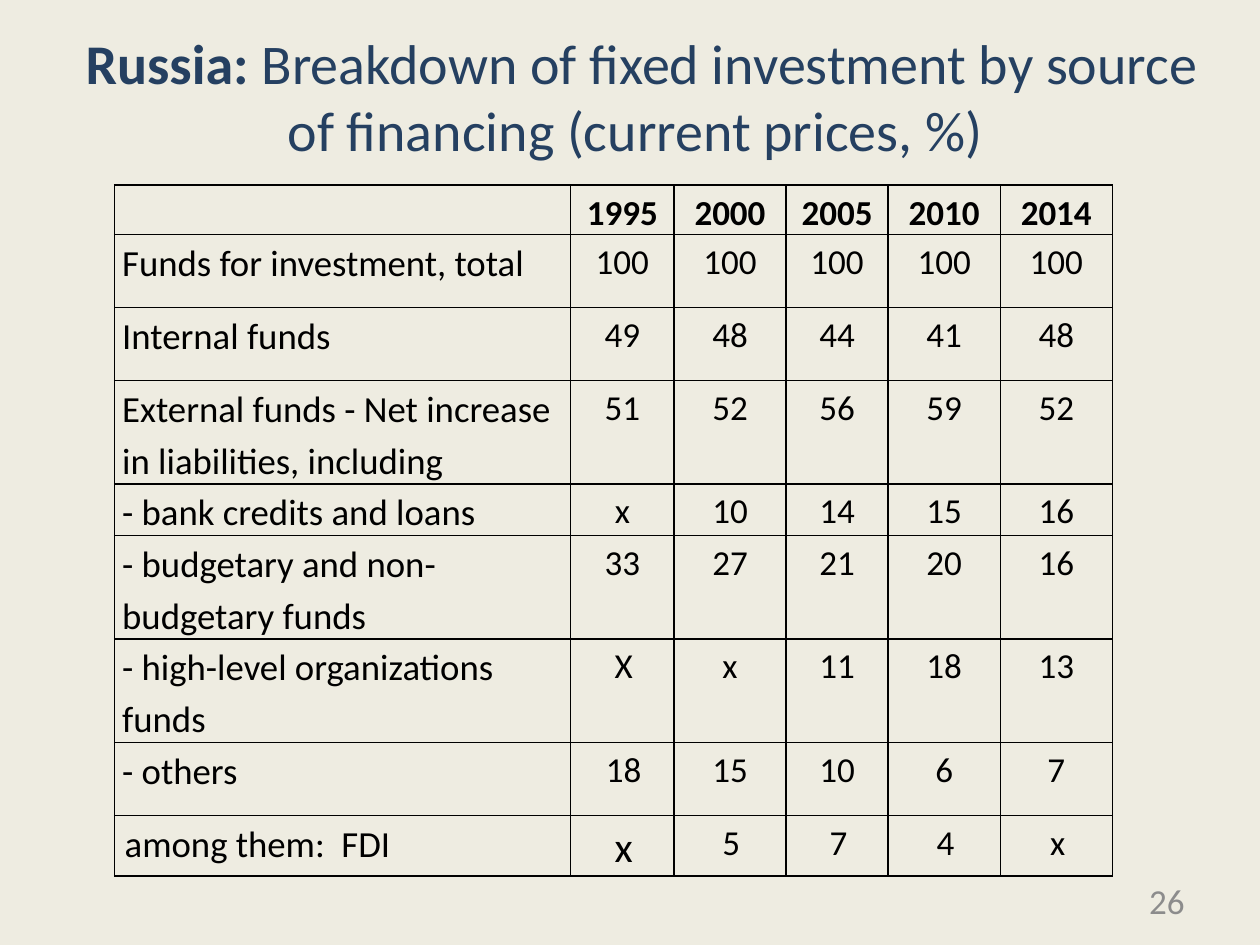
from typing import NamedTuple

from lxml import etree
from pptx import Presentation
from pptx.dml.color import RGBColor
from pptx.enum import text
from pptx.oxml import ns
from pptx.util import Inches, Pt

FONT = "Calibri"
CREAM = RGBColor(0xEE, 0xEC, 0xE1)
NAVY = RGBColor(0x25, 0x40, 0x61)
BLACK = RGBColor(0x00, 0x00, 0x00)
GREY = RGBColor(0x8C, 0x8C, 0x8C)
LEFT, CENTER, RIGHT = text.PP_ALIGN.LEFT, text.PP_ALIGN.CENTER, text.PP_ALIGN.RIGHT
MIDDLE = text.MSO_ANCHOR.MIDDLE

COLUMN_WIDTHS = (3.62, 0.82, 0.89, 0.81, 0.89, 0.89)
YEARS = ("1995", "2000", "2005", "2010", "2014")
HEADER_HEIGHT = 0.39
ONE_LINE, SHORT_LINE, TWO_LINES, LAST_LINE = 0.58, 0.41, 0.82, 0.48
FIRST_INDENT = 0.02


class Source(NamedTuple):
    """A source of financing: its shares by year and its row's layout."""
    label: str
    shares: tuple[str, ...]
    height: float = ONE_LINE
    indented: tuple[int, ...] = ()
    first_size: int = 20


SOURCES = (
    Source("Funds for investment, total", ("100",) * 5),
    Source("Internal funds", ("49", "48", "44", "41", "48")),
    Source("External funds - Net increase in liabilities, including",
           ("51", "52", "56", "59", "52"), TWO_LINES),
    Source("- bank credits and loans", ("x", "10", "14", "15", "16"), SHORT_LINE),
    Source("- budgetary and non-budgetary funds",
           ("33", "27", "21", "20", "16"), TWO_LINES),
    Source("- high-level organizations funds",
           ("Х", "х", "11", "18", "13"), TWO_LINES, (1,)),
    Source("- others", ("18", "15", "10", "6", "7"), indented=(1,)),
    Source("among them:  FDI", ("x", "5", "7", "4", "x"), LAST_LINE,
           tuple(range(6)), 24),
)


def write(paragraph, words: str, *, size: float, color: RGBColor = BLACK,
          bold: bool = False, align=LEFT, spacing: float | None = None,
          after: float | None = None, indent: float = 0) -> None:
    """Add a run to the paragraph and format both."""
    paragraph.alignment = align
    if spacing is not None:
        paragraph.line_spacing = spacing
    if after is not None:
        paragraph.space_after = Pt(after)
    if indent:
        properties = paragraph._p.get_or_add_pPr()
        properties.set("marL", "0")
        properties.set("indent", str(Inches(indent)))
    run = paragraph.add_run()
    run.text = words
    run.font.name = FONT
    run.font.size = Pt(size)
    run.font.bold = bold
    run.font.color.rgb = color


def rule_cell(cell) -> None:
    """Clear the cell's fill and draw a thin black line on all four sides."""
    cell.fill.background()
    properties = cell._tc.get_or_add_tcPr()
    for position, side in enumerate(("lnL", "lnR", "lnT", "lnB")):
        line = etree.Element(ns.qn(f"a:{side}"), w=str(Pt(1)))
        fill = etree.SubElement(line, ns.qn("a:solidFill"))
        etree.SubElement(fill, ns.qn("a:srgbClr"), val=str(BLACK))
        properties.insert(position, line)


def add_title(slide) -> None:
    title = slide.shapes.title
    title.left, title.top = Inches(0.51), Inches(0.21)
    title.width, title.height = Inches(9.17), Inches(1.1)
    frame = title.text_frame
    frame.auto_size = text.MSO_AUTO_SIZE.NONE
    frame.vertical_anchor = MIDDLE
    heading = frame.paragraphs[0]
    write(heading, "Russia: ", size=32, color=NAVY, bold=True, align=CENTER)
    write(heading, "Breakdown of fixed investment by source of financing "
          "(current prices, %) ", size=32, color=NAVY, align=CENTER)


def add_financing_table(slide) -> None:
    heights = [HEADER_HEIGHT] + [source.height for source in SOURCES]
    table = slide.shapes.add_table(
        len(heights), len(COLUMN_WIDTHS), Inches(0.91), Inches(1.47),
        Inches(sum(COLUMN_WIDTHS)), Inches(sum(heights))).table
    table.first_row = table.horz_banding = False
    for column, width in zip(table.columns, COLUMN_WIDTHS):
        column.width = Inches(width)
    for row, height in zip(table.rows, heights):
        row.height = Inches(height)
    for cell in table.iter_cells():
        cell.margin_left = cell.margin_right = Inches(0.06)
        cell.margin_top = cell.margin_bottom = 0
        rule_cell(cell)

    for column, year in enumerate(YEARS, 1):
        write(table.cell(0, column).text_frame.paragraphs[0], year, size=20,
              bold=True, align=CENTER, spacing=1.15, after=10)
    for row, source in enumerate(SOURCES, 1):
        for column, words in enumerate((source.label, *source.shares)):
            is_label = column == 0
            share_size = source.first_size if column == 1 else 20
            write(table.cell(row, column).text_frame.paragraphs[0], words,
                  size=21 if is_label else share_size,
                  align=LEFT if is_label else CENTER,
                  spacing=1.15, after=0 if is_label else 10,
                  indent=FIRST_INDENT if column in source.indented else 0)


def add_page_number(slide, number: int) -> None:
    frame = slide.shapes.add_textbox(
        Inches(7.17), Inches(6.95), Inches(2.33), Inches(0.4)).text_frame
    frame.word_wrap = True
    frame.vertical_anchor = MIDDLE
    write(frame.paragraphs[0], str(number), size=20, color=GREY, align=RIGHT)


def main() -> None:
    deck = Presentation()
    deck.slide_width, deck.slide_height = Inches(10), Inches(7.5)
    slide = deck.slides.add_slide(deck.slide_layouts.get_by_name("Title Only"))
    slide.background.fill.solid()
    slide.background.fill.fore_color.rgb = CREAM
    add_title(slide)
    add_financing_table(slide)
    add_page_number(slide, 26)
    deck.save("out.pptx")


if __name__ == "__main__":
    main()
